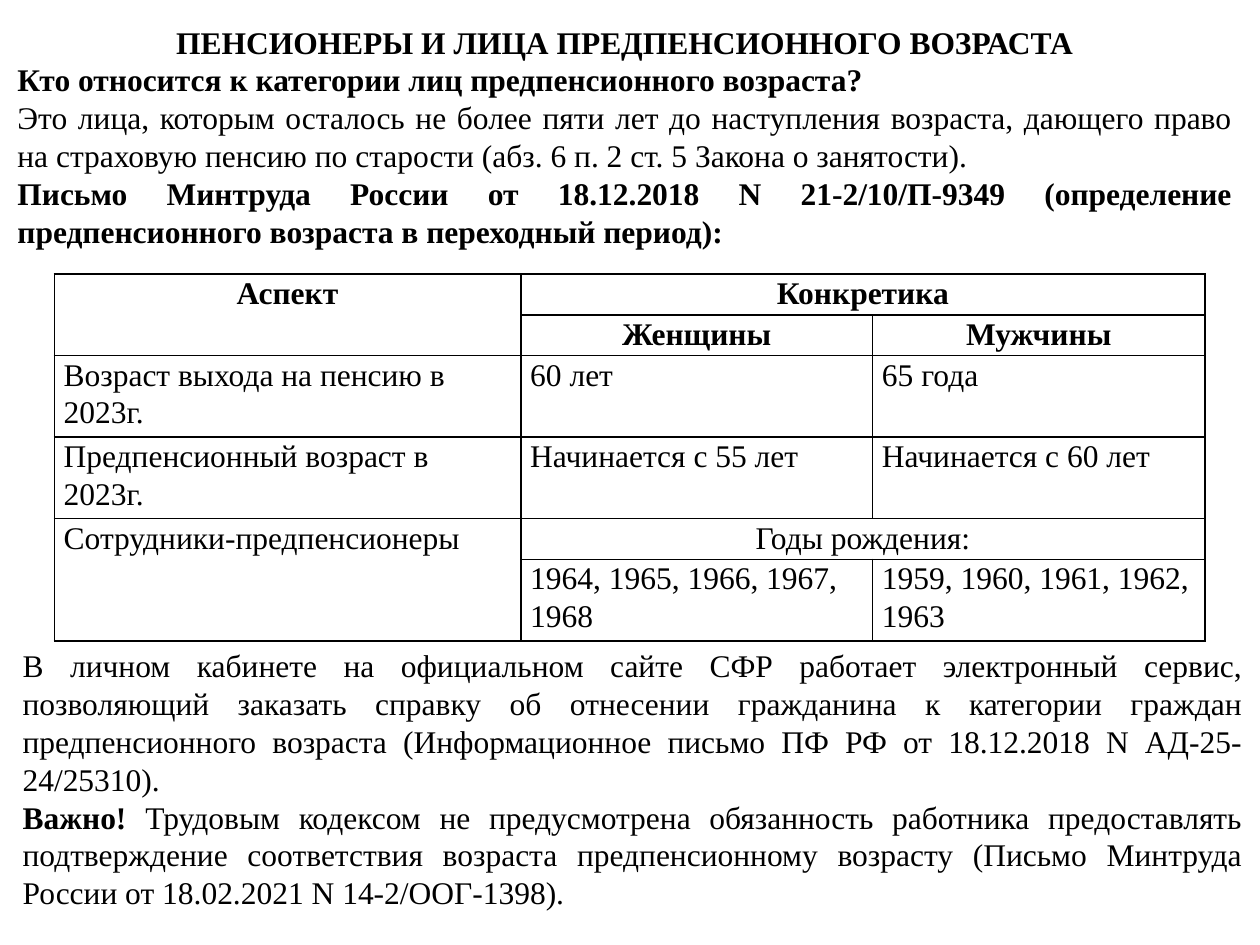
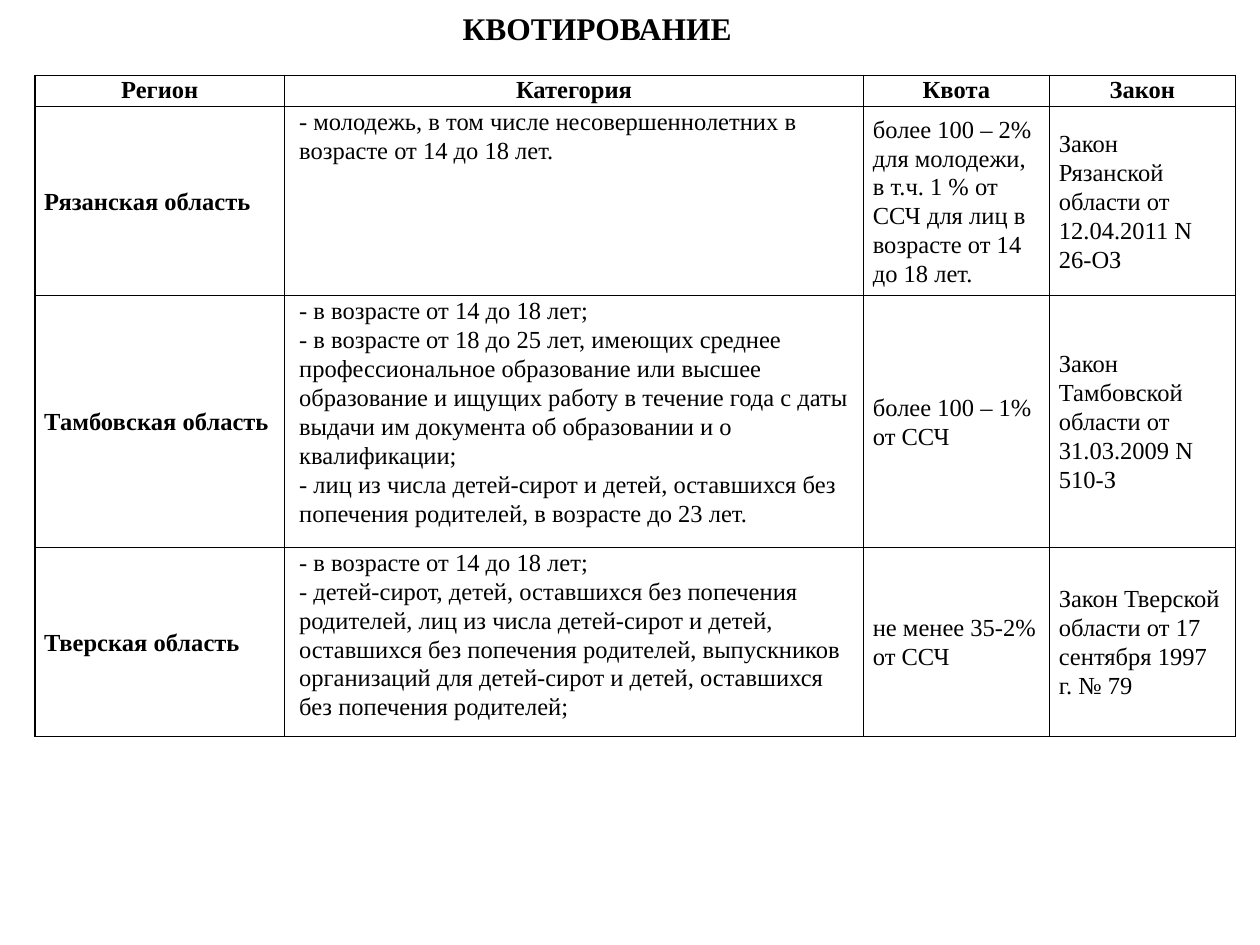
from dataclasses import dataclass
from typing import Optional

from lxml.etree import SubElement
from pptx import Presentation
from pptx.dml.color import RGBColor
from pptx.enum.text import MSO_ANCHOR as Anchor, MSO_AUTO_SIZE as AutoSize, PP_ALIGN as Align
from pptx.oxml.ns import qn
from pptx.util import Pt

FONT = "Times New Roman"
BLACK = "000000"
WHITE = "FFFFFF"
BODY_SIZE = 18
CELL_SIZE = 14
CELL_INSET = 5.4


@dataclass(frozen=True)
class Line:
    text: str
    align: Align = Align.JUSTIFY
    bold: bool = False
    lead: str = ""


@dataclass(frozen=True)
class TextBlock:
    left: float
    top: float
    width: float
    height: float
    lines: tuple[Line, ...]
    anchor: Anchor = Anchor.TOP
    wrap: bool = True


@dataclass(frozen=True)
class Cell:
    text: str
    align: Align = Align.LEFT
    bold: bool = False
    anchor: Anchor = Anchor.TOP
    indent: float = 0
    rows: int = 1
    columns: int = 1


@dataclass(frozen=True)
class Grid:
    left: float
    top: float
    widths: tuple[float, ...]
    heights: tuple[float, ...]
    size: float
    cells: dict[tuple[int, int], Cell]
    fill: Optional[str] = None


def colour(value: str) -> RGBColor:
    return RGBColor.from_string(value)


def add_span(para, text: str, *, size: float = BODY_SIZE, bold: bool = False, ink: str = BLACK) -> None:
    span = para.add_run()
    span.text = text
    span.font.name = FONT
    span.font.size = Pt(size)
    span.font.bold = bold
    span.font.color.rgb = colour(ink)


def next_para(frame, index: int, align: Align):
    para = frame.add_paragraph() if index else frame.paragraphs[0]
    para.alignment = align
    return para


def draw_text(page, block: TextBlock) -> None:
    box = page.shapes.add_textbox(Pt(block.left), Pt(block.top), Pt(block.width), Pt(block.height))
    frame = box.text_frame
    frame.word_wrap = block.wrap
    frame.auto_size = AutoSize.SHAPE_TO_FIT_TEXT
    frame.vertical_anchor = block.anchor
    for index, line in enumerate(block.lines):
        para = next_para(frame, index, line.align)
        if line.lead:
            add_span(para, line.lead, bold=True)
        add_span(para, line.text, bold=line.bold)


def add_borders(cell) -> None:
    properties = cell._tc.get_or_add_tcPr()
    for index, side in enumerate(("lnL", "lnR", "lnT", "lnB")):
        border = SubElement(properties, qn(f"a:{side}"), w=str(Pt(1)))
        paint = SubElement(border, qn("a:solidFill"))
        SubElement(paint, qn("a:srgbClr"), val=BLACK)
        properties.insert(index, border)


def fill_cell(cell, content: Cell, size: float) -> None:
    cell.vertical_anchor = content.anchor
    for index, text in enumerate(content.text.split("\n")):
        para = next_para(cell.text_frame, index, content.align)
        para.line_spacing = 1.07
        if content.indent:
            para._p.get_or_add_pPr().set("marL", str(Pt(content.indent)))
        add_span(para, text, size=size, bold=content.bold)


def draw_table(page, grid: Grid) -> None:
    table = page.shapes.add_table(
        len(grid.heights), len(grid.widths), Pt(grid.left), Pt(grid.top),
        Pt(sum(grid.widths)), Pt(sum(grid.heights)),
    ).table
    table.first_row = table.horz_banding = False
    for column, width in zip(table.columns, grid.widths):
        column.width = Pt(width)
    for row, height in zip(table.rows, grid.heights):
        row.height = Pt(height)
    for cell in table.iter_cells():
        cell.margin_left = cell.margin_right = Pt(CELL_INSET)
        cell.margin_top = cell.margin_bottom = 0
        if grid.fill:
            cell.fill.solid()
            cell.fill.fore_color.rgb = colour(grid.fill)
        else:
            cell.fill.background()
        add_borders(cell)
    for (row, column), content in grid.cells.items():
        cell = table.cell(row, column)
        if content.rows * content.columns > 1:
            cell.merge(table.cell(row + content.rows - 1, column + content.columns - 1))
        fill_cell(cell, content, grid.size)


def heading(text: str, **layout) -> Cell:
    return Cell(text, align=Align.CENTER, bold=True, **layout)


def draw_pension_page(page) -> None:
    draw_text(page, TextBlock(2.9, 9.4, 708.5, 160, (
        Line("ПЕНСИОНЕРЫ И ЛИЦА ПРЕДПЕНСИОННОГО ВОЗРАСТА", Align.CENTER, True),
        Line("Кто относится к категории лиц предпенсионного возраста?", bold=True),
        Line("Это лица, которым осталось не более пяти лет до наступления возраста, дающего право "
             "на страховую пенсию по старости (абз. 6 п. 2 ст. 5 Закона о занятости)."),
        Line("Письмо Минтруда России от 18.12.2018 N 21-2/10/П-9349 (определение "
             "предпенсионного возраста в переходный период):", bold=True),
    )))
    draw_text(page, TextBlock(5.8, 365, 711.4, 160, (
        Line("В личном кабинете на официальном сайте СФР работает электронный сервис, позволяющий "
             "заказать справку об отнесении гражданина к категории граждан предпенсионного возраста "
             "(Информационное письмо ПФ РФ от 18.12.2018 N АД-25-24/25310)."),
        Line("Трудовым кодексом не предусмотрена обязанность работника предоставлять подтверждение "
             "соответствия возраста предпенсионному возрасту (Письмо Минтруда России от 18.02.2021 "
             "N 14-2/ООГ-1398).", lead="Важно! "),
    ), anchor=Anchor.MIDDLE))
    single, double = 23.3, 46.6
    draw_table(page, Grid(
        31, 156.7, (266.6, 201, 190), (single, single, double, double, single, double), BODY_SIZE, {
            (0, 0): heading("Аспект", rows=2),
            (0, 1): heading("Конкретика", columns=2),
            (1, 1): heading("Женщины"),
            (1, 2): heading("Мужчины"),
            (2, 0): Cell("Возраст выхода на пенсию в 2023г."),
            (2, 1): Cell("60 лет"),
            (2, 2): Cell("65 года"),
            (3, 0): Cell("Предпенсионный возраст в 2023г."),
            (3, 1): Cell("Начинается с 55 лет"),
            (3, 2): Cell("Начинается с 60 лет"),
            (4, 0): Cell("Сотрудники-предпенсионеры", rows=2),
            (4, 1): Cell("Годы рождения:", align=Align.CENTER, columns=2),
            (5, 1): Cell("1964, 1965, 1966, 1967, 1968"),
            (5, 2): Cell("1959, 1960, 1961, 1962, 1963"),
        }, WHITE))


def draw_quota_page(page) -> None:
    draw_text(page, TextBlock(256.3, 1.5, 170, 29, (
        Line("КВОТИРОВАНИЕ", Align.CENTER, True),
    ), wrap=False))
    headings = ("Регион", "Категория", "Квота", "Закон")
    regions = (
        ("Рязанская область",
         "- молодежь, в том числе несовершеннолетних в возрасте от 14 до 18 лет.",
         "более 100 – 2% для молодежи, в т.ч. 1 % от ССЧ для лиц в возрасте от 14 до 18 лет.",
         "Закон Рязанской области от 12.04.2011 N 26-ОЗ"),
        ("Тамбовская область",
         "- в возрасте от 14 до 18 лет;\n"
         "- в возрасте от 18 до 25 лет, имеющих среднее профессиональное образование или высшее "
         "образование и ищущих работу в течение года с даты выдачи им документа об образовании "
         "и о квалификации;\n"
         "- лиц из числа детей-сирот и детей, оставшихся без попечения родителей, в возрасте до 23 лет.",
         "более 100 – 1% от ССЧ",
         "Закон Тамбовской области от 31.03.2009 N 510-З"),
        ("Тверская область",
         "- в возрасте от 14 до 18 лет;\n"
         "- детей-сирот, детей, оставшихся без попечения родителей, лиц из числа детей-сирот и детей, "
         "оставшихся без попечения родителей, выпускников организаций для детей-сирот и детей, "
         "оставшихся без попечения родителей;",
         "не менее 35-2% от ССЧ",
         "Закон Тверской области от 17 сентября 1997 г. № 79"),
    )
    cells = {(0, column): heading(text) for column, text in enumerate(headings)}
    for row, (region, category, quota, law) in enumerate(regions, start=1):
        cells[row, 0] = Cell(region, bold=True, anchor=Anchor.MIDDLE)
        cells[row, 1] = Cell(category, indent=2.85)
        cells[row, 2] = Cell(quota, anchor=Anchor.MIDDLE)
        cells[row, 3] = Cell(law, anchor=Anchor.MIDDLE)
    draw_table(page, Grid(
        19.9, 43, (142.8, 330.7, 106.3, 106.3), (18, 108, 143.6, 108), CELL_SIZE, cells))


def main() -> None:
    deck = Presentation()
    deck.slide_width, deck.slide_height = Pt(720), Pt(540)
    for draw_page in (draw_pension_page, draw_quota_page):
        draw_page(deck.slides.add_slide(deck.slide_layouts[6]))
    deck.save("out.pptx")


if __name__ == "__main__":
    main()
